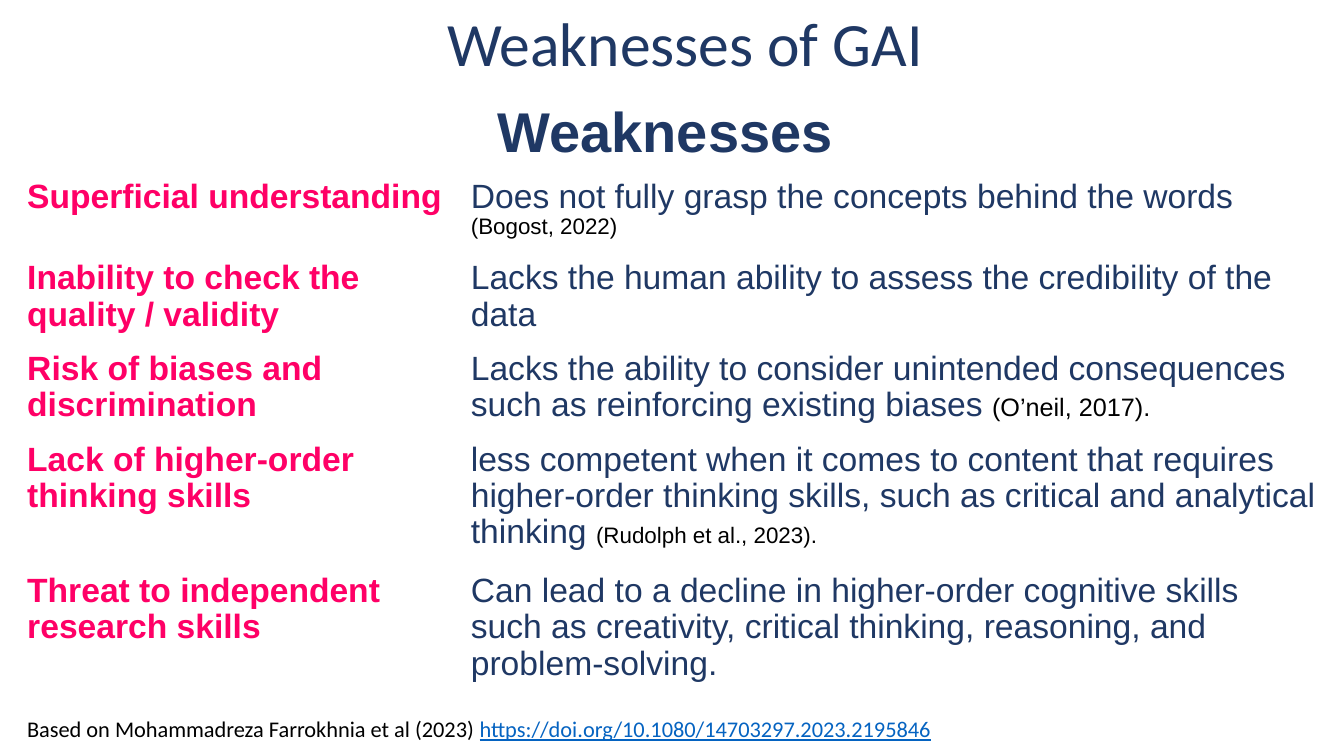
from dataclasses import dataclass
from typing import Optional

from pptx import Presentation
from pptx.dml.color import RGBColor
from pptx.enum.text import MSO_ANCHOR, PP_ALIGN
from pptx.slide import Slide
from pptx.util import Inches, Pt

LEFT, CENTER = PP_ALIGN.LEFT, PP_ALIGN.CENTER
TOP = MSO_ANCHOR.TOP


@dataclass(frozen=True)
class Theme:
    navy: str = "1F3864"
    pink: str = "FF0066"
    black: str = "000000"
    link: str = "0563C1"
    body_font: str = "Arial"
    title_font: str = "Calibri"
    title: float = 44
    heading: float = 40
    heading_gap: float = 36
    body: float = 24
    note: float = 16
    line_spacing: float = 0.97


THEME = Theme()


@dataclass(frozen=True)
class Weakness:
    name: str
    detail: str
    height: float
    citation: str = ""
    citation_size: float = THEME.note


HEADING_HEIGHT = 0.76
COLUMN_WIDTHS = (4.4, 8.59)
WEAKNESSES = (
    Weakness("Superficial understanding",
             "Does not fully grasp the concepts behind the words ", 0.81, "(Bogost, 2022)"),
    Weakness("Inability to check the quality / validity",
             "Lacks the human ability to assess the credibility of the data", 0.9),
    Weakness("Risk of biases and discrimination",
             "Lacks the ability to consider unintended consequences such as "
             "reinforcing existing biases ", 0.9, "(O’neil, 2017).", 18),
    Weakness("Lack of higher-order thinking skills",
             "less competent when it comes to content that requires higher-order thinking "
             "skills, such as critical and analytical thinking ", 1.3, "(Rudolph et al., 2023)."),
    Weakness("Threat to independent research skills",
             "Can lead to a decline in higher-order cognitive skills such as creativity, "
             "critical thinking, reasoning, and problem-solving.", 1.3),
)


def add_span(para, text: str, *, size: float, color: str, font: str = THEME.body_font,
             bold: bool = False, underline: bool = False) -> None:
    span = para.add_run()
    span.text = text
    span.font.name = font
    span.font.size = Pt(size)
    span.font.bold = bold
    span.font.underline = underline
    span.font.color.rgb = RGBColor.from_string(color)


def add_text_box(page: Slide, left: float, top: float, width: float, height: float,
                 align: PP_ALIGN = LEFT):
    """Add a wrapping text box and return its first paragraph."""
    box = page.shapes.add_textbox(Inches(left), Inches(top), Inches(width), Inches(height))
    box.text_frame.word_wrap = True
    para = box.text_frame.paragraphs[0]
    para.alignment = align
    return para


def open_cell(cell, align: PP_ALIGN = LEFT, line_spacing: Optional[float] = None):
    """Clear the cell's fill and return its first paragraph."""
    cell.fill.background()
    cell.vertical_anchor = TOP
    para = cell.text_frame.paragraphs[0]
    para.alignment = align
    para.line_spacing = line_spacing
    return para


def add_weakness_table(page: Slide) -> None:
    heights = [HEADING_HEIGHT] + [weakness.height for weakness in WEAKNESSES]
    frame = page.shapes.add_table(len(heights), len(COLUMN_WIDTHS), Inches(0.17), Inches(0.96),
                                  Inches(sum(COLUMN_WIDTHS)), Inches(sum(heights)))
    table = frame.table
    table.first_row = False
    table.horz_banding = False
    for column, width in zip(table.columns, COLUMN_WIDTHS):
        column.width = Inches(width)
    for row, height in zip(table.rows, heights):
        row.height = Inches(height)

    heading = table.cell(0, 0)
    heading.merge(table.cell(0, 1))
    para = open_cell(heading, CENTER)
    add_span(para, "Weaknesses", size=THEME.heading, color=THEME.navy, bold=True)
    add_span(para, " ", size=THEME.heading_gap, color=THEME.navy, bold=True)

    for index, weakness in enumerate(WEAKNESSES, start=1):
        para = open_cell(table.cell(index, 0), line_spacing=THEME.line_spacing)
        add_span(para, weakness.name, size=THEME.body, color=THEME.pink, bold=True)
        para = open_cell(table.cell(index, 1), line_spacing=THEME.line_spacing)
        add_span(para, weakness.detail, size=THEME.body, color=THEME.navy)
        if weakness.citation:
            add_span(para, weakness.citation, size=weakness.citation_size, color=THEME.black)


def main() -> None:
    deck = Presentation()
    deck.slide_width, deck.slide_height = Inches(13.33), Inches(7.5)
    page = deck.slides.add_slide(deck.slide_layouts[6])

    title = add_text_box(page, 0.56, 0, 12.61, 0.84, CENTER)
    add_span(title, "Weaknesses of GAI ", size=THEME.title, color=THEME.navy,
             font=THEME.title_font)

    add_weakness_table(page)

    source = add_text_box(page, 0.17, 7.05, 9.44, 0.37)
    add_span(source, "Based on Mohammadreza Farrokhnia et al (2023) ", size=THEME.note,
             color=THEME.black, font=THEME.title_font)
    add_span(source, "https://doi.org/10.1080/14703297.2023.2195846", size=THEME.note,
             color=THEME.link, font=THEME.title_font, underline=True)

    deck.save("out.pptx")


if __name__ == "__main__":
    main()
